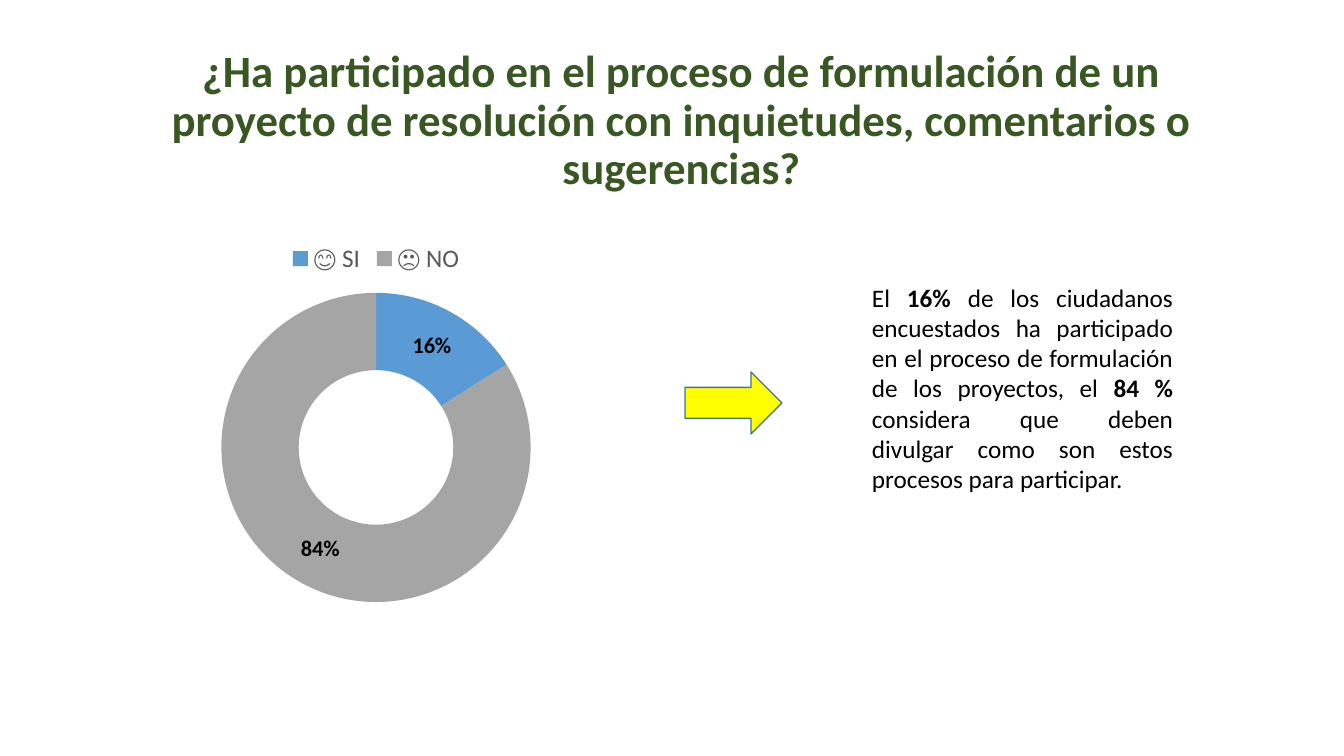
from dataclasses import dataclass

from pptx import Presentation
from pptx.chart.data import CategoryChartData
from pptx.dml.color import RGBColor
from pptx.enum.chart import XL_CHART_TYPE as ChartType, XL_LEGEND_POSITION as LegendPosition
from pptx.enum.shapes import MSO_SHAPE as Preset
from pptx.enum.text import MSO_ANCHOR as Anchor, PP_ALIGN as Align
from pptx.util import Emu, Pt

QUESTION = [("¿Ha participado en el proceso de formulación de un proyecto de "
             "resolución con inquietudes, comentarios o sugerencias?", True)]
FINDING = [
    ("El ", False),
    ("16% ", True),
    ("de los ciudadanos encuestados ha participado en el proceso de "
     "formulación de los proyectos, el ", False),
    ("84 %", True),
    (" considera que deben divulgar como son estos procesos para participar.", False),
]
ANSWERS = {"😊 SI": 16, "🙁 NO": 84}

# left, top, width, height in px
SLIDE_SIZE = (1344, 756)
QUESTION_BOX = (102, 17, 1159, 159)
CHART_BOX = (124, 231, 504, 385)
ARROW_BOX = (685, 372, 97, 62)
FINDING_BOX = (786, 276, 495, 224)
# left, top, right, bottom in px
QUESTION_INSETS = (30, 32, 30, 0)
FINDING_INSETS = (86, 6, 108, 5)


@dataclass(frozen=True)
class Theme:
    font: str = "Calibri"
    ink: str = "000000"
    title: str = "385723"
    legend: str = "595959"
    arrow_fill: str = "FFFF00"
    arrow_line: str = "43739E"
    answers: tuple = ("5B9BD5", "A5A5A5")
    title_size: int = 32
    body_size: int = 18
    label_size: int = 16


THEME = Theme()


def px(length):
    return Emu(round(length * 914400 / 100.8))


def place(box):
    return [px(length) for length in box]


def style(font, size, color, bold=False):
    font.name, font.size, font.bold = THEME.font, Pt(size), bold
    font.color.rgb = RGBColor.from_string(color)


def add_text(slide, box, insets, pieces, size, color, align):
    """Add a one-paragraph text box made of (text, bold) pieces."""
    frame = slide.shapes.add_textbox(*place(box)).text_frame
    frame.word_wrap = True
    frame.vertical_anchor = Anchor.TOP
    (frame.margin_left, frame.margin_top,
     frame.margin_right, frame.margin_bottom) = place(insets)
    paragraph = frame.paragraphs[0]
    paragraph.alignment = align
    for text, bold in pieces:
        run = paragraph.add_run()
        run.text = text
        style(run.font, size, color, bold)
    return paragraph


def add_answers_chart(slide):
    data = CategoryChartData()
    data.categories = list(ANSWERS)
    data.add_series("Respuestas", list(ANSWERS.values()))
    chart = slide.shapes.add_chart(ChartType.DOUGHNUT, *place(CHART_BOX), data).chart
    chart.has_title = False
    style(chart.font, THEME.body_size, THEME.ink)

    chart.has_legend = True
    chart.legend.position = LegendPosition.TOP
    chart.legend.include_in_layout = False
    style(chart.legend.font, THEME.body_size, THEME.legend)

    ring = chart.plots[0]
    ring.has_data_labels = True
    labels = ring.data_labels
    labels.show_percentage = True
    labels.show_value = False
    labels.number_format, labels.number_format_is_linked = "0%", False
    style(labels.font, THEME.label_size, THEME.ink, bold=True)
    for index, color in enumerate(THEME.answers):
        fill = ring.series[0].points[index].format.fill
        fill.solid()
        fill.fore_color.rgb = RGBColor.from_string(color)


def add_arrow(slide):
    arrow = slide.shapes.add_shape(Preset.RIGHT_ARROW, *place(ARROW_BOX))
    arrow.shadow.inherit = False
    arrow.fill.solid()
    arrow.fill.fore_color.rgb = RGBColor.from_string(THEME.arrow_fill)
    arrow.line.color.rgb = RGBColor.from_string(THEME.arrow_line)
    arrow.line.width = Pt(1)


def main():
    deck = Presentation()
    deck.slide_width, deck.slide_height = place(SLIDE_SIZE)
    slide = deck.slides.add_slide(deck.slide_layouts[6])
    question = add_text(slide, QUESTION_BOX, QUESTION_INSETS, QUESTION,
                        THEME.title_size, THEME.title, Align.CENTER)
    question.line_spacing = 0.9
    add_arrow(slide)
    add_text(slide, FINDING_BOX, FINDING_INSETS, FINDING,
             THEME.body_size, THEME.ink, Align.JUSTIFY)
    add_answers_chart(slide)
    deck.save("out.pptx")


if __name__ == "__main__":
    main()
